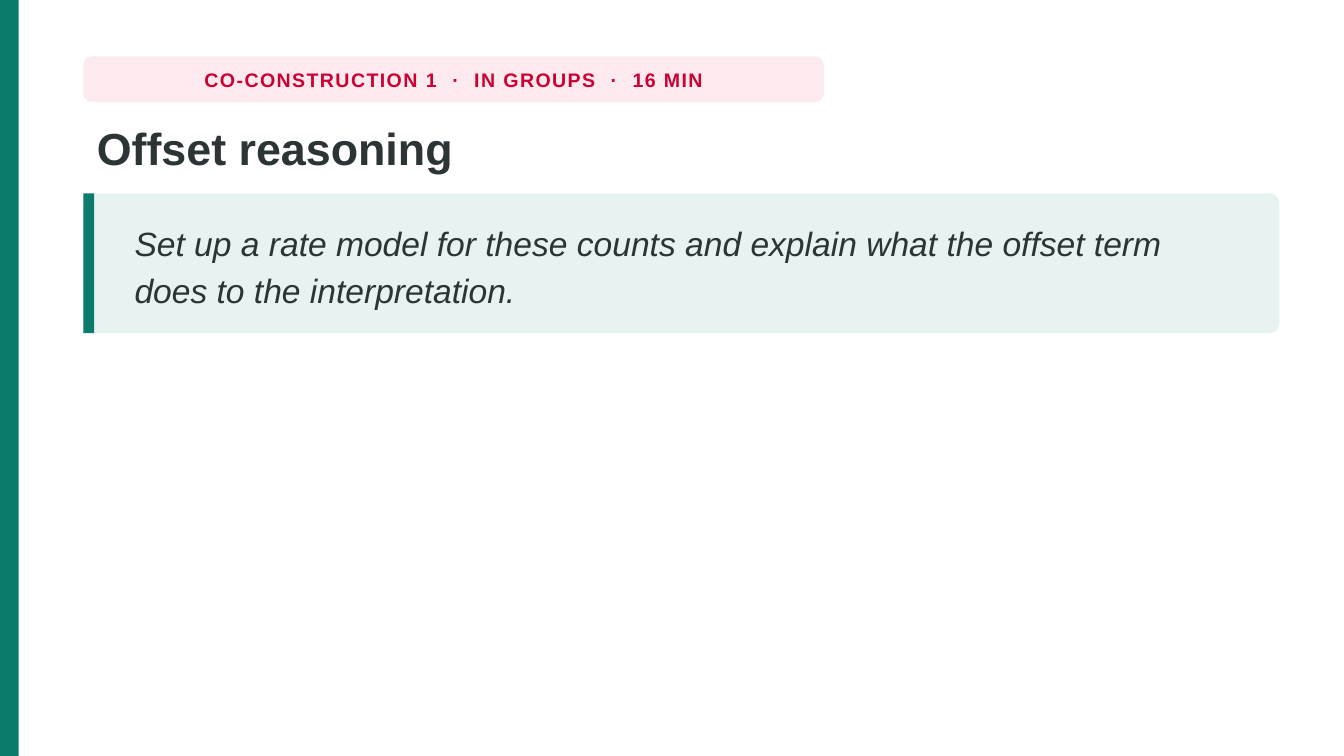
from dataclasses import dataclass

from pptx import Presentation
from pptx.dml.color import RGBColor
from pptx.enum.shapes import MSO_SHAPE as Shape
from pptx.enum.text import MSO_ANCHOR as Anchor, MSO_AUTO_SIZE as AutoSize, PP_ALIGN as Align
from pptx.util import Inches, Pt

COLORS = {
    "page": "FFFFFF",
    "green": "0B7B6B",
    "mint": "E6F3F0",
    "pink": "FDEAEF",
    "red": "CC0033",
    "ink": "2D3436",
}
FONT = "Arial"
WIDTH = 10
HEIGHT = WIDTH * 9 / 16
LEFT, CONTENT_WIDTH = 0.62, 8.9
CARD_TOP, CARD_HEIGHT = 1.44, 1.04


@dataclass
class Panel:
    left: float
    top: float
    width: float
    height: float
    color: str
    radius: float = 0  # corner size as a share of the height


@dataclass
class Style:
    size: float
    color: str
    bold: bool = False
    italic: bool = False


def rgb(name: str) -> RGBColor:
    return RGBColor.from_string(COLORS[name])


def draw_panel(page, panel: Panel):
    kind = Shape.ROUNDED_RECTANGLE if panel.radius else Shape.RECTANGLE
    box = page.shapes.add_shape(kind, Inches(panel.left), Inches(panel.top),
                                Inches(panel.width), Inches(panel.height))
    if panel.radius:
        box.adjustments[0] = panel.radius
    box.shadow.inherit = False
    box.fill.solid()
    box.fill.fore_color.rgb = rgb(panel.color)
    box.line.fill.background()
    return box


def add_span(para, text: str, style: Style, tracking: float = 0) -> None:
    span = para.add_run()
    span.text = text
    span.font.name = FONT
    span.font.size = Pt(style.size)
    span.font.bold = style.bold
    span.font.italic = style.italic
    span.font.color.rgb = rgb(style.color)
    if tracking:
        span.font._element.set("spc", str(round(tracking * 100)))


deck = Presentation()
deck.slide_width, deck.slide_height = Inches(WIDTH), Inches(HEIGHT)
page = deck.slides.add_slide(deck.slide_layouts[5])
page.background.fill.solid()
page.background.fill.fore_color.rgb = rgb("page")

# Edge stripe
draw_panel(page, Panel(0, 0, 0.14, HEIGHT, "green"))

# Activity tag, with wide spaces around the dots
tag = draw_panel(page, Panel(LEFT, 0.42, 5.51, 0.34, "pink", 0.18))
tag.text_frame.word_wrap = False
tag.text_frame.vertical_anchor = Anchor.MIDDLE
para = tag.text_frame.paragraphs[0]
para.alignment = Align.CENTER
tag_style = Style(10.5, "red", bold=True)
for index, part in enumerate(["CO-CONSTRUCTION 1", "·", "IN GROUPS", "·", "16 MIN"]):
    if index:
        add_span(para, " ", tag_style, tracking=4.5)
    add_span(para, part, tag_style, tracking=0.8)

# Title
title = page.shapes.title
title.left, title.top = Inches(LEFT), Inches(0.84)
title.width, title.height = Inches(CONTENT_WIDTH), Inches(0.56)
title.text_frame.word_wrap = True
title.text_frame.auto_size = AutoSize.NONE
title.text_frame.vertical_anchor = Anchor.TOP
para = title.text_frame.paragraphs[0]
para.alignment = Align.LEFT
para.line_spacing = 1.02
add_span(para, "Offset reasoning", Style(24, "ink", bold=True))

# Task card with its accent bar
card = draw_panel(page, Panel(LEFT, CARD_TOP, CONTENT_WIDTH, CARD_HEIGHT, "mint", 0.07))
draw_panel(page, Panel(LEFT, CARD_TOP, 0.08, CARD_HEIGHT, "green"))
frame = card.text_frame
frame.word_wrap = True
frame.vertical_anchor = Anchor.MIDDLE
frame.margin_left, frame.margin_right = Inches(0.36), Inches(0.35)
para = frame.paragraphs[0]
para.alignment = Align.LEFT
para.line_spacing = 1.16
add_span(para, "Set up a rate model for these counts and explain what the offset term "
               "does to the interpretation.", Style(18, "ink", italic=True))

deck.save("out.pptx")
